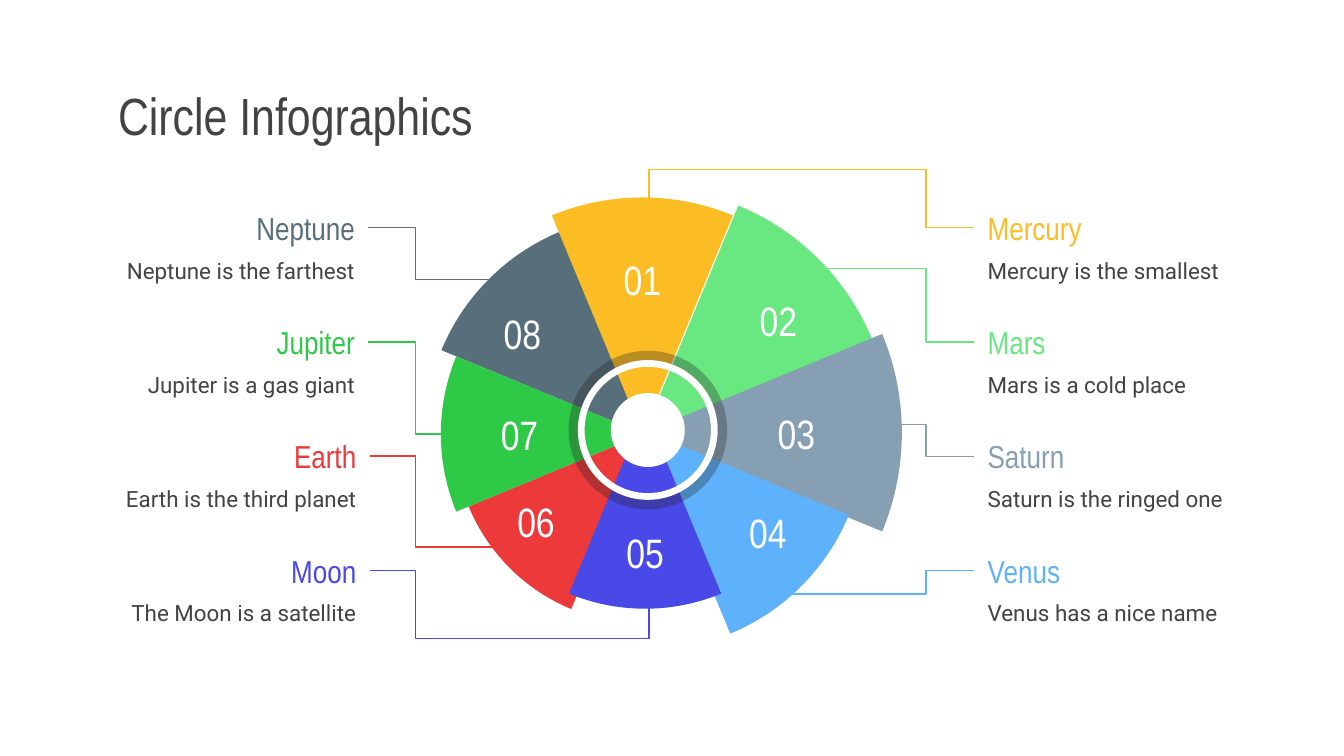
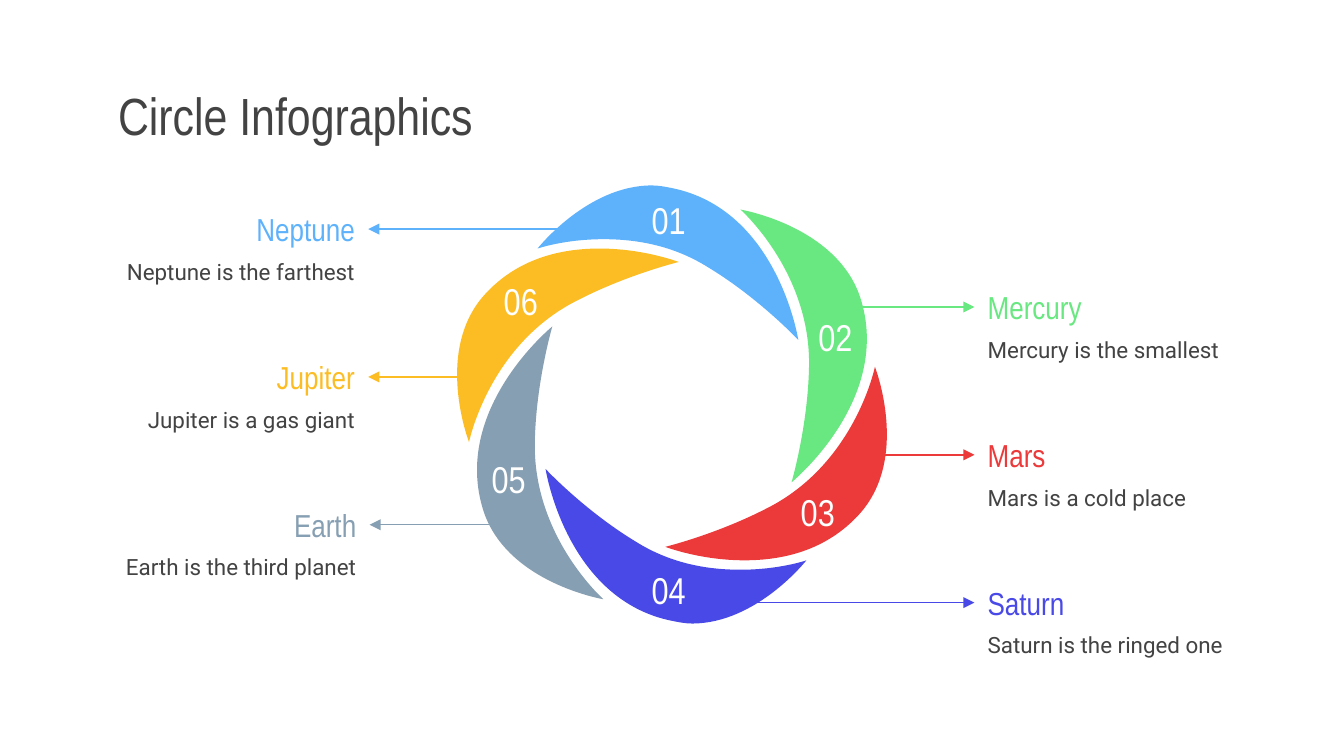
from math import cos, radians, sin, tan

from lxml import etree
from pptx import Presentation
from pptx import util as u
from pptx.dml.color import RGBColor
from pptx.enum import shapes, text
from pptx.oxml.ns import qn

COLORS = {
    "yellow": "FCBD24", "mint": "69E781", "steel": "869FB2", "sky": "5EB2FC",
    "indigo": "4949E7", "red": "EC3A3B", "green": "2FC948", "slate": "576F7A",
    "ink": "434343", "white": "FFFFFF", "shade": "231F20",
}
HEAD_FONT, BODY_FONT = "Arial Narrow", "Roboto"
ALIGN = text.PP_ALIGN

# Label columns: text box left and width, and where the callouts turn
COLUMNS = {"left": (0.78, 1.96), "right": (7.25, 1.98)}
TURN = {"left": 3.09, "right": 6.89}

# Wheel: hub of the sectors and centre of the rings
HUB = (4.79, 3.23)
RING_CENTRE = (4.82, 3.2)
PAD = 0.1  # text inset

# Sectors from back to front: number, colour, radius, hub, insets (l, t, r, b)
SECTORS = [
    (2, "mint", 1.84, HUB, (0.4, PAD, PAD, PAD)),
    (3, "steel", 1.92, (4.79, 3.22), (0.4, PAD, PAD, PAD)),
    (4, "sky", 1.63, (4.81, 3.21), (0.4, PAD, PAD, PAD)),
    (8, "slate", 1.63, HUB, (PAD, PAD, 0.4, PAD)),
    (6, "red", 1.41, HUB, (PAD, PAD, 0.4, PAD)),
    (7, "green", 1.51, HUB, (PAD, PAD, 0.4, PAD)),
    (1, "yellow", 1.76, (4.78, 3.23), (PAD, PAD, PAD, 0.6)),
    (5, "indigo", 1.48, (4.8, 3.05), (PAD, 0.7, PAD, PAD)),
]
# Wheel labels: side, row, name, note, colour, points where the callout starts
WHEEL_LABELS = [
    ("right", 0, "Mercury", "Mercury is the smallest", "yellow", [(4.83, 1.52), (4.83, 1.26)]),
    ("right", 1, "Mars", "Mars is a cold place", "mint", [(6.1, 2)]),
    ("right", 2, "Saturn", "Saturn is the ringed one", "steel", [(6.68, 3.16)]),
    ("right", 3, "Venus", "Venus has a nice name", "sky", [(5.86, 4.42)]),
    ("left", 0, "Neptune", "Neptune is the farthest", "slate", [(3.69, 2.08)]),
    ("left", 1, "Jupiter", "Jupiter is a gas giant", "green", [(3.7, 3.23)]),
    ("left", 2, "Earth", "Earth is the third planet", "red", [(3.7, 4.07)]),
    ("left", 3, "Moon", "The Moon is a satellite", "indigo", [(4.83, 4.5), (4.83, 4.75)]),
]

# Blades: a start point, then curves of two control points and an end point.
# Each one also appears turned half round about the centre of the ring.
BLADE_CENTRE = (5, 3.01)
BLADES = [
    [(4.85, 1.38), (4.37, 1.38), (4, 1.85), (4, 1.85), (4, 1.85), (4.2, 1.78), (4.49, 1.78),
     (4.72, 1.78), (5, 1.82), (5.27, 1.99), (5.65, 2.22), (5.94, 2.53), (5.94, 2.53),
     (5.94, 2.53), (5.79, 1.56), (5, 1.4), (4.95, 1.39), (4.9, 1.38), (4.85, 1.38)],
    [(5.51, 1.56), (5.51, 1.56), (6.04, 2.03), (6.02, 2.74), (6.01, 3.18), (5.89, 3.59),
     (5.89, 3.59), (5.89, 3.59), (6.65, 2.97), (6.4, 2.21), (6.22, 1.68), (5.51, 1.56),
     (5.51, 1.56)],
    [(6.51, 2.73), (6.51, 2.73), (6.37, 3.42), (5.75, 3.76), (5.36, 3.97), (4.95, 4.07),
     (4.95, 4.07), (4.95, 4.07), (5.21, 4.17), (5.54, 4.17), (5.82, 4.17), (6.15, 4.1),
     (6.4, 3.82), (6.77, 3.4), (6.51, 2.73), (6.51, 2.73)],
]
# Blade labels in number order: side, row, name, note, colour,
# where the arrow meets the blade, left and top of the number
BLADE_LABELS = [
    ("left", 0, "Neptune", "Neptune is the farthest", "sky", 4.18, (4.7, 1.42)),
    ("right", 0, "Mercury", "Mercury is the smallest", "mint", 6.32, (5.94, 2.29)),
    ("right", 1, "Mars", "Mars is a cold place", "red", 6.52, (5.81, 3.59)),
    ("right", 2, "Saturn", "Saturn is the ringed one", "indigo", 5.57, (4.7, 4.17)),
    ("left", 2, "Earth", "Earth is the third planet", "steel", 3.82, (3.51, 3.35)),
    ("left", 1, "Jupiter", "Jupiter is a gas giant", "yellow", 3.47, (3.6, 2.02)),
]
BLADE_TOPS = {"left": 1.47, "right": 2.05}


def inch(value):
    return u.Cm(2.54 * value)


def rgb(color):
    return RGBColor.from_string(COLORS[color])


# Text
def write(shape, words, size, color, font=HEAD_FONT, align=ALIGN.CENTER, insets=(PAD,) * 4):
    frame = shape.text_frame
    frame.word_wrap = True
    frame.vertical_anchor = text.MSO_ANCHOR.MIDDLE
    (frame.margin_left, frame.margin_top,
     frame.margin_right, frame.margin_bottom) = map(inch, insets)
    frame.text = words
    paragraph = frame.paragraphs[0]
    paragraph.alignment = align
    run_font = paragraph.runs[0].font
    run_font.name, run_font.size = font, u.Pt(size)
    run_font.color.rgb = rgb(color)


def add_words(slide, box, *args, **kwargs):
    words_box = slide.shapes.add_textbox(*map(inch, box))
    write(words_box, *args, **kwargs)
    return words_box


def add_label(slide, side, top, name, note, color):
    """Add a planet's name and note; return the name box and the callout's end."""
    left, width = COLUMNS[side]
    if name in ("Earth", "Moon"):
        left += 0.01
    align = ALIGN.RIGHT if side == "left" else ALIGN.LEFT
    name_box = add_words(slide, (left, top, width, 0.47), name, 17, color, align=align)
    add_words(slide, (left, top + 0.38, width, 0.34), note, 12, "ink", BODY_FONT, align)
    return name_box, (left + width if side == "left" else left, top + 0.47 / 2)


# Outlines
def paint(shape, color):
    shape.shadow.inherit = False
    shape.fill.solid()
    shape.fill.fore_color.rgb = rgb(color)
    shape.line.fill.background()


def add_outline(slide, points, close=True):
    start, *rest = [(inch(x), inch(y)) for x, y in points]
    builder = slide.shapes.build_freeform(*start)
    builder.add_line_segments(rest, close=close)
    return builder.convert_to_shape()


def add_curved_outline(slide, points, straight=0):
    """Draw the first segments straight and each further three points as a curve."""
    outline = add_outline(slide, points)
    track = outline.element.spPr.find(".//" + qn("a:path"))
    bends = track.findall(qn("a:lnTo"))[straight:]
    for i in range(0, len(bends), 3):
        curve = track.makeelement(qn("a:cubicBezTo"))
        bends[i].addprevious(curve)
        for bend in bends[i:i + 3]:
            curve.append(bend[0])
            track.remove(bend)
    return outline


def add_sector(slide, number, color, radius, hub, insets):
    middle = 45 * (number - 1) - 90
    a, b = radians(middle - 22.5), radians(middle + 22.5)
    pull = 4 / 3 * tan((b - a) / 4)
    rim = [(cos(a), sin(a)),
           (cos(a) - pull * sin(a), sin(a) + pull * cos(a)),
           (cos(b) + pull * sin(b), sin(b) - pull * cos(b)),
           (cos(b), sin(b))]
    points = [hub] + [(hub[0] + radius * x, hub[1] + radius * y) for x, y in rim]
    sector = add_curved_outline(slide, points, straight=1)
    paint(sector, color)
    write(sector, f"{number:02}", 22, "white", insets=insets)


def add_round(slide, preset, diameter, color, band=None, opacity=None):
    x, y = (c - diameter / 2 for c in RING_CENTRE)
    ring = slide.shapes.add_shape(preset, *map(inch, (x, y, diameter, diameter)))
    paint(ring, color)
    if band:
        ring.adjustments[0] = band / diameter
    if opacity:
        tint = ring.element.spPr.find(".//" + qn("a:srgbClr"))
        etree.SubElement(tint, qn("a:alpha"), val=str(opacity * 1000))


# Lines
def add_line(slide, preset, start, end, color):
    line = slide.shapes.add_connector(preset, *map(inch, start + end))
    line.line.color.rgb = rgb(color)
    line.line.width = u.Pt(0.75)
    etree.SubElement(line.element.spPr, qn("a:effectLst"))
    return line


def add_elbow(slide, start, end, turn, color):
    elbow = add_line(slide, shapes.MSO_CONNECTOR.ELBOW, start, end, color)
    share = (turn - start[0]) / (end[0] - start[0])
    guides = elbow.element.spPr.find(qn("a:prstGeom")).get_or_add_avLst()
    etree.SubElement(guides, qn("a:gd"), name="adj1", fmla=f"val {round(share * 100000)}")


def add_route(slide, points, color):
    route = add_outline(slide, points, close=False)
    route.shadow.inherit = False
    route.fill.background()
    route.line.color.rgb = rgb(color)
    route.line.width = u.Pt(0.75)


def add_arrow(slide, side, name_box, start, meets, color):
    arrow = add_line(slide, shapes.MSO_CONNECTOR.STRAIGHT, start, (meets, start[1]), color)
    arrow.begin_connect(name_box, 3 if side == "left" else 1)
    outline = arrow.element.spPr.find(qn("a:ln"))
    etree.SubElement(outline, qn("a:headEnd"), type="triangle")


# Slides
def add_titled_slide(deck):
    slide = deck.slides.add_slide(deck.slide_layouts[6])
    add_words(slide, (0.78, 0.59, 8.45, 0.53), "Circle Infographics", 28, "ink", align=ALIGN.LEFT)
    return slide


def build_wheel(slide):
    for side, row, name, note, color, start in WHEEL_LABELS:
        _, end = add_label(slide, side, 1.46 + 0.85 * row, name, note, color)
        turn = TURN[side]
        if len(start) == 1:
            add_elbow(slide, start[0], end, turn, color)
        else:
            add_route(slide, start + [(turn, start[-1][1]), (turn, end[1]), end], color)
    for sector in SECTORS:
        add_sector(slide, *sector)
    preset = shapes.MSO_SHAPE
    add_round(slide, preset.DONUT, 1.18, "shade", band=0.11, opacity=30)
    add_round(slide, preset.OVAL, 0.55, "white")
    add_round(slide, preset.DONUT, 1.04, "white", band=0.05)


def build_blades(slide):
    cx, cy = BLADE_CENTRE
    turned = [[(2 * cx - x, 2 * cy - y) for x, y in blade] for blade in BLADES]
    for number, (label, knots) in enumerate(zip(BLADE_LABELS, BLADES + turned), 1):
        side, row, name, note, color, meets, corner = label
        name_box, end = add_label(slide, side, BLADE_TOPS[side] + 1.1 * row, name, note, color)
        add_arrow(slide, side, name_box, end, meets, color)
        paint(add_curved_outline(slide, knots), color)
        add_words(slide, corner + (0.55, 0.43), f"{number:02}", 20, "white")


def main():
    deck = Presentation()
    deck.slide_width, deck.slide_height = u.Cm(25.4), u.Cm(14.29)
    build_wheel(add_titled_slide(deck))
    build_blades(add_titled_slide(deck))
    deck.save("out.pptx")


if __name__ == "__main__":
    main()
